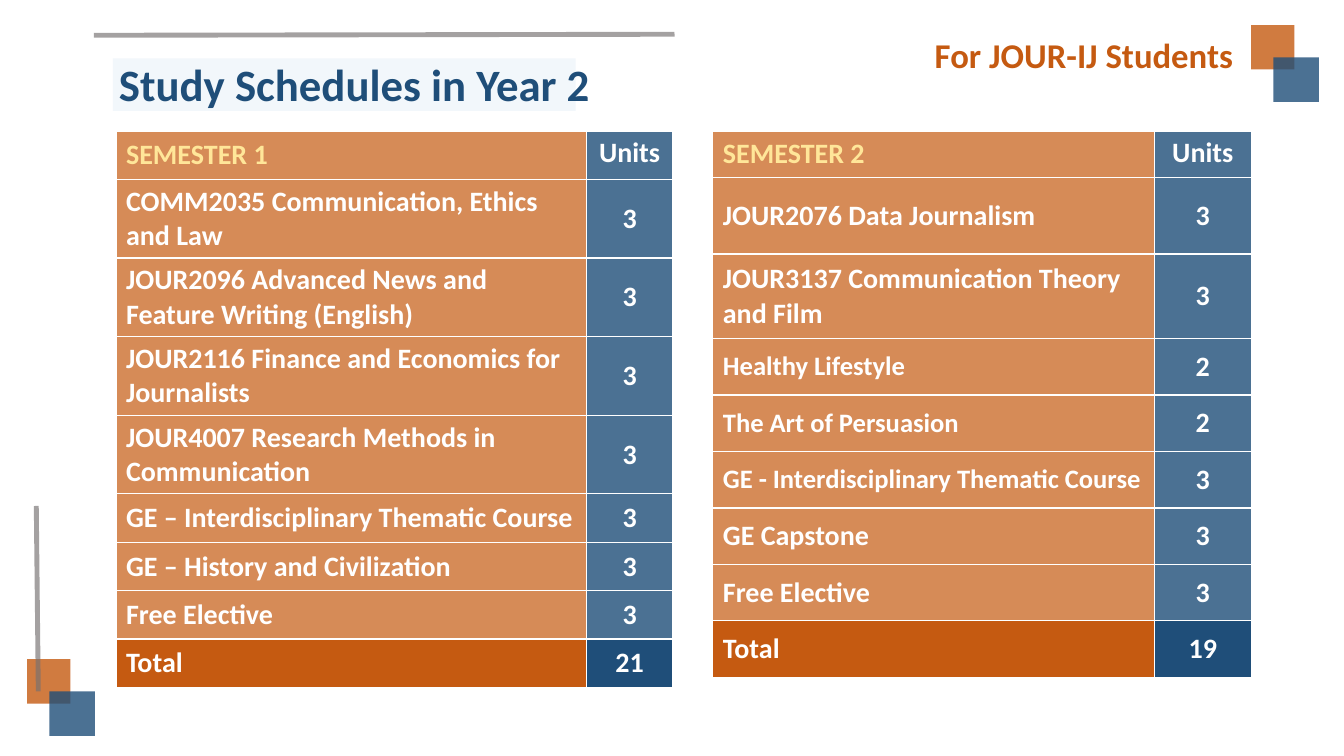
"""Build the Year 2 study schedule slide for JOUR-IJ students."""
import dataclasses
import typing

import lxml.etree
import pptx
import pptx.dml.color
import pptx.enum.shapes
import pptx.enum.text
import pptx.oxml.ns
import pptx.util

Inches = pptx.util.Inches
Pt = pptx.util.Pt
qn = pptx.oxml.ns.qn
Align = pptx.enum.text.PP_ALIGN
Anchor = pptx.enum.text.MSO_ANCHOR


@dataclasses.dataclass(frozen=True)
class Theme:
    """Colours, font and type sizes of the slide."""
    orange: str = "C55A11"
    blue: str = "1F4E79"
    pale_blue: str = "DEEBF7"
    grey: str = "767171"
    yellow: str = "FFE699"
    white: str = "FFFFFF"
    font: str = "Calibri"
    title_size: float = 32
    audience_size: float = 24.8
    table_size: float = 20
    compact_size: float = 19


THEME = Theme()


class Block(typing.NamedTuple):
    """A translucent rectangle."""
    left: float
    top: float
    width: float
    height: float
    color: str
    opacity: int


class Rule(typing.NamedTuple):
    """A translucent grey line."""
    x1: float
    y1: float
    x2: float
    y2: float


class Course(typing.NamedTuple):
    """A course row of a semester."""
    title: str
    units: int
    height: float
    size: float = THEME.table_size


@dataclasses.dataclass(frozen=True)
class Semester:
    """A semester table."""
    name: str
    left: float
    widths: tuple[float, float]
    header_height: float
    total_height: float
    courses: tuple[Course, ...]


TITLE_PANEL = Block(1.12, 0.58, 4.59, 0.52, THEME.pale_blue, 39)
CORNERS = ((12.41, 0.25), (0.27, 6.54))
RULES = (Rule(0.93, 0.35, 6.69, 0.34), Rule(0.36, 5.02, 0.38, 6.86))
SEMESTERS = (
    Semester("SEMESTER 1", 1.15, (4.67, 0.85), 0.48, 0.48, (
        Course("COMM2035 Communication, Ethics and Law", 3, 0.78),
        Course("JOUR2096 Advanced News and Feature Writing (English)", 3, 0.78),
        Course("JOUR2116 Finance and Economics for Journalists", 3, 0.78),
        Course("JOUR4007 Research Methods in Communication", 3, 0.78),
        Course("GE – Interdisciplinary Thematic Course", 3, 0.48),
        Course("GE – History and Civilization", 3, 0.48),
        Course("Free Elective", 3, 0.48),
    )),
    Semester("SEMESTER 2", 7.07, (4.38, 0.96), 0.46, 0.56, (
        Course("JOUR2076 Data Journalism", 3, 0.76),
        Course("JOUR3137 Communication Theory and Film", 3, 0.84),
        Course("Healthy Lifestyle", 2, 0.56, THEME.compact_size),
        Course("The Art of Persuasion", 2, 0.56, THEME.compact_size),
        Course("GE - Interdisciplinary Thematic Course", 3, 0.56, THEME.compact_size),
        Course("GE Capstone", 3, 0.56),
        Course("Free Elective", 3, 0.56),
    )),
)


def rgb(color: str) -> pptx.dml.color.RGBColor:
    """Return a colour object for a hex code."""
    return pptx.dml.color.RGBColor.from_string(color)


def set_opacity(element, percent: int) -> None:
    """Make every explicit colour inside an element translucent."""
    for color in element.iter(qn("a:srgbClr")):
        lxml.etree.SubElement(color, qn("a:alpha"), val=str(percent * 1000))


def write_text(frame, text: str, *, size: float, color: str, align=Align.LEFT,
               spacing: float = 1.0) -> None:
    """Fill a text frame with one bold paragraph."""
    paragraph = frame.paragraphs[0]
    paragraph.alignment = align
    paragraph.line_spacing = spacing
    run = paragraph.add_run()
    run.text = text
    run.font.name = THEME.font
    run.font.size = Pt(size)
    run.font.bold = True
    run.font.color.rgb = rgb(color)


def add_block(slide, block: Block):
    """Draw a translucent rectangle."""
    shape = slide.shapes.add_shape(
        pptx.enum.shapes.MSO_SHAPE.RECTANGLE, Inches(block.left),
        Inches(block.top), Inches(block.width), Inches(block.height))
    shape.shadow.inherit = False
    shape.fill.solid()
    shape.fill.fore_color.rgb = rgb(block.color)
    shape.line.fill.background()
    set_opacity(shape.element, block.opacity)
    return shape


def add_rule(slide, rule: Rule) -> None:
    """Draw a grey line without shadow."""
    line = slide.shapes.add_connector(
        pptx.enum.shapes.MSO_CONNECTOR.STRAIGHT, Inches(rule.x1),
        Inches(rule.y1), Inches(rule.x2), Inches(rule.y2))
    line.line.color.rgb = rgb(THEME.grey)
    line.line.width = Pt(3.5)
    set_opacity(line.element, 66)
    lxml.etree.SubElement(line.element.spPr, qn("a:effectLst"))


def format_cell(cell, color: str, opacity: int) -> None:
    """Give a cell its fill and thin white borders."""
    cell.fill.solid()
    cell.fill.fore_color.rgb = rgb(color)
    properties = cell._tc.get_or_add_tcPr()
    if opacity < 100:
        set_opacity(properties, opacity)
    for position, side in enumerate(("a:lnL", "a:lnR", "a:lnT", "a:lnB")):
        border = lxml.etree.Element(qn(side), w=str(Pt(1)))
        fill = lxml.etree.SubElement(border, qn("a:solidFill"))
        lxml.etree.SubElement(fill, qn("a:srgbClr"), val=THEME.white)
        properties.insert(position, border)


def add_semester(slide, semester: Semester) -> None:
    """Draw a semester table with its header and unit total."""
    total = sum(course.units for course in semester.courses)
    rows = (Course(semester.name, 0, semester.header_height), *semester.courses,
            Course("Total", total, semester.total_height))
    table = slide.shapes.add_table(
        len(rows), 2, Inches(semester.left), Inches(1.3),
        Inches(sum(semester.widths)), Inches(sum(row.height for row in rows))).table
    table.first_row = table.horz_banding = False
    for column, width in zip(table.columns, semester.widths):
        column.width = Inches(width)
    for index, row in enumerate(rows):
        is_header, is_total = index == 0, index == len(rows) - 1
        table.rows[index].height = Inches(row.height)
        name, units = table.cell(index, 0), table.cell(index, 1)
        format_cell(name, THEME.orange, 100 if is_total else 70)
        format_cell(units, THEME.blue, 100 if is_total else 80)
        name.vertical_anchor = Anchor.MIDDLE
        units.vertical_anchor = Anchor.TOP if is_header else Anchor.MIDDLE
        write_text(name.text_frame, row.title, size=row.size,
                   color=THEME.yellow if is_header else THEME.white)
        write_text(units.text_frame, "Units" if is_header else str(row.units),
                   size=THEME.table_size, color=THEME.white, align=Align.CENTER)


def main() -> None:
    """Build and save the slide."""
    deck = pptx.Presentation()
    deck.slide_width, deck.slide_height = Inches(13.33), Inches(7.5)
    slide = deck.slides.add_slide(deck.slide_layouts[5])

    title = slide.shapes.title
    title.left, title.top = Inches(1.08), Inches(0.36)
    title.width, title.height = Inches(7.33), Inches(0.79)
    title.text_frame.auto_size = pptx.enum.text.MSO_AUTO_SIZE.NONE
    title.text_frame.vertical_anchor = Anchor.BOTTOM
    write_text(title.text_frame, "Study Schedules in Year 2",
               size=THEME.title_size, color=THEME.blue, spacing=0.9)
    title.element.addprevious(add_block(slide, TITLE_PANEL).element)

    top_rule, side_rule = RULES
    add_rule(slide, top_rule)
    for left, top in CORNERS:
        add_block(slide, Block(left, top, 0.43, 0.44, THEME.orange, 80))
        add_block(slide, Block(left + 0.22, top + 0.32, 0.45, 0.44, THEME.blue, 80))
    add_rule(slide, side_rule)

    audience = slide.shapes.add_textbox(
        Inches(9), Inches(0.15), Inches(3.41), Inches(0.64)).text_frame
    audience.word_wrap = True
    audience.vertical_anchor = Anchor.BOTTOM
    write_text(audience, "For JOUR-IJ Students ", size=THEME.audience_size,
               color=THEME.orange, align=Align.RIGHT, spacing=0.7)

    for semester in SEMESTERS:
        add_semester(slide, semester)
    deck.save("out.pptx")


if __name__ == "__main__":
    main()
